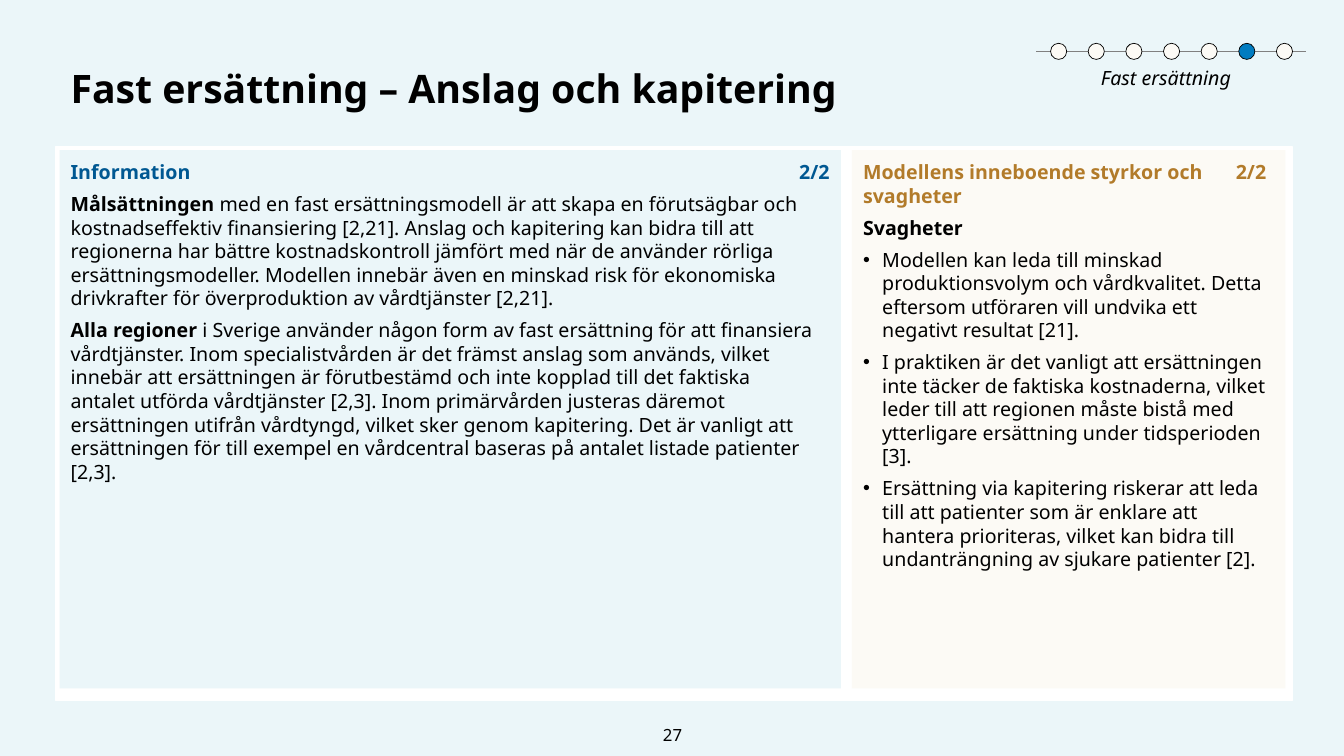
from lxml.etree import SubElement
from pptx import Presentation
from pptx.dml.color import RGBColor
from pptx.enum.shapes import MSO_CONNECTOR, MSO_SHAPE
from pptx.enum.text import MSO_ANCHOR as Anchor, MSO_AUTO_SIZE, PP_ALIGN as Align
from pptx.oxml.ns import qn
from pptx.util import Inches, Pt

BLACK = RGBColor(0x00, 0x00, 0x00)
WHITE = RGBColor(0xFF, 0xFF, 0xFF)
GRAY = RGBColor(0x80, 0x80, 0x80)
ICE = RGBColor(0xEB, 0xF6, 0xF9)
CREAM = RGBColor(0xFC, 0xFA, 0xF5)
BLUE = RGBColor(0x00, 0x58, 0x92)
OCHRE = RGBColor(0xB2, 0x7B, 0x2A)
ACTIVE = RGBColor(0x01, 0x7C, 0xC1)
FONT = "Noto Sans"
INDENT = 0.19

TITLE = "Fast ersättning – Anslag och kapitering"
SECTION = "Fast ersättning"
PAGE_NUMBER = "27"
PART = "2/2"
STEPS, CURRENT_STEP = 7, 5

# Each paragraph: (bold lead, regular text, has bullet)
INFORMATION = [
    ("Målsättningen ", "med en fast ersättningsmodell är att skapa en förutsägbar och "
     "kostnadseffektiv finansiering [2,21]. Anslag och kapitering kan bidra till att regionerna "
     "har bättre kostnadskontroll jämfört med när de använder rörliga ersättningsmodeller. "
     "Modellen innebär även en minskad risk för ekonomiska drivkrafter för överproduktion av "
     "vårdtjänster [2,21].", False),
    ("Alla regioner ", "i Sverige använder någon form av fast ersättning för att finansiera "
     "vårdtjänster. Inom specialistvården är det främst anslag som används, vilket innebär att "
     "ersättningen är förutbestämd och inte kopplad till det faktiska antalet utförda "
     "vårdtjänster [2,3]. Inom primärvården justeras däremot ersättningen utifrån vårdtyngd, "
     "vilket sker genom kapitering. Det är vanligt att ersättningen för till exempel en "
     "vårdcentral baseras på antalet listade patienter [2,3].", False),
]
WEAKNESSES = [
    ("Svagheter", "", False),
    ("", "Modellen kan leda till minskad produktionsvolym och vårdkvalitet. Detta eftersom "
     "utföraren vill undvika ett negativt resultat [21].", True),
    ("", "I praktiken är det vanligt att ersättningen inte täcker de faktiska kostnaderna, "
     "vilket leder till att regionen måste bistå med ytterligare ersättning under tidsperioden "
     "[3].", True),
    ("", "Ersättning via kapitering riskerar att leda till att patienter som är enklare att "
     "hantera prioriteras, vilket kan bidra till undanträngning av sjukare patienter [2].", True),
]
# Panel box, text box, left edge of the part label
PANELS = [
    ("Information", INFORMATION, BLUE, ICE,
     (0.59, 1.49, 7.75, 5.34), (0.7, 1.59, 7.53, 4.88), 7.26),
    ("Modellens inneboende styrkor och svagheter", WEAKNESSES, OCHRE, CREAM,
     (8.45, 1.49, 4.3, 5.34), (8.56, 1.59, 4.17, 5.2), 11.59),
]


def place(shape, box):
    shape.left, shape.top, shape.width, shape.height = map(Inches, box)


def add_filled(shapes, kind, box, fill, line=None, line_width=1):
    shape = shapes.add_shape(kind, *map(Inches, box))
    shape.shadow.inherit = False
    shape.fill.solid()
    shape.fill.fore_color.rgb = fill
    if line is None:
        shape.line.fill.background()
    else:
        shape.line.color.rgb = line
        shape.line.width = Pt(line_width)
    return shape


def set_frame(shape, insets, anchor=Anchor.TOP):
    frame = shape.text_frame
    frame.word_wrap = True
    frame.auto_size = MSO_AUTO_SIZE.NONE
    frame.vertical_anchor = anchor
    for side, inset in zip(("left", "top", "right", "bottom"), insets):
        setattr(frame, f"margin_{side}", Inches(inset))
    return frame


def add_run(paragraph, text, size=14, color=BLACK, bold=False, italic=False):
    run = paragraph.add_run()
    run.text = text
    formats = {"name": FONT, "size": Pt(size), "bold": bold, "italic": italic}
    for name, value in formats.items():
        setattr(run.font, name, value)
    run.font.color.rgb = color


def set_paragraph(paragraph, align=Align.LEFT, spacing=1.0, after=0):
    formats = {"alignment": align, "line_spacing": spacing,
               "space_before": Pt(0), "space_after": Pt(after)}
    for name, value in formats.items():
        setattr(paragraph, name, value)


def set_bullet(paragraph, bulleted):
    properties = paragraph._p.get_or_add_pPr()
    indent = Inches(INDENT) if bulleted else 0
    properties.set("marL", str(indent))
    properties.set("indent", str(-indent))
    if bulleted:
        SubElement(properties, qn("a:buFont"), typeface="Arial")
        SubElement(properties, qn("a:buChar"), char="•")
    else:
        SubElement(properties, qn("a:buNone"))


def add_label(slide, box, text, align, insets, anchor, **font):
    label = slide.shapes.add_textbox(*map(Inches, box))
    paragraph = set_frame(label, insets, anchor).paragraphs[0]
    set_paragraph(paragraph, align)
    add_run(paragraph, text, **font)


def fill_body(body, heading, paragraphs, color):
    frame = set_frame(body, (0, 0, 0.1, 0.05))
    first = frame.paragraphs[0]
    set_bullet(first, False)
    set_paragraph(first, after=6)
    add_run(first, heading, color=color, bold=True)
    for lead, text, bulleted in paragraphs:
        paragraph = frame.add_paragraph()
        set_bullet(paragraph, bulleted)
        set_paragraph(paragraph, after=6)
        if lead:
            add_run(paragraph, lead, bold=True)
        if text:
            add_run(paragraph, text)


def add_progress(slide):
    group = slide.shapes.add_group_shape()
    track = group.shapes.add_connector(
        MSO_CONNECTOR.STRAIGHT, *map(Inches, (12.95, 0.51, 10.28, 0.51)))
    track.line.color.rgb = GRAY
    track.line.width = Pt(1)
    SubElement(track._element.spPr, qn("a:effectLst"))
    first, last, size = 10.42, 12.66, 0.16
    step = (last - first) / (STEPS - 1)
    for index in range(STEPS):
        fill = ACTIVE if index == CURRENT_STEP else CREAM
        add_filled(group.shapes, MSO_SHAPE.OVAL,
                   (first + index * step, 0.43, size, size), fill, BLACK, 0.5)


def main():
    presentation = Presentation()
    presentation.slide_width, presentation.slide_height = Inches(13.33), Inches(7.5)
    slide = presentation.slides.add_slide(presentation.slide_layouts[3])
    slide.background.fill.solid()
    slide.background.fill.fore_color.rgb = ICE
    title, *bodies = slide.placeholders

    add_filled(slide.shapes, MSO_SHAPE.RECTANGLE, (0.55, 1.46, 12.27, 5.49), WHITE, WHITE)
    place(title, (0.7, 0.59, 11.94, 0.8))
    paragraph = set_frame(title, (0, 0, 0.1, 0.05)).paragraphs[0]
    set_paragraph(paragraph, spacing=1.1)
    add_run(paragraph, TITLE, size=28, bold=True)

    for body, panel in zip(bodies, PANELS):
        heading, paragraphs, color, fill, panel_box, text_box, part_left = panel
        add_filled(slide.shapes, MSO_SHAPE.RECTANGLE, panel_box, fill)
        place(body, text_box)
        fill_body(body, heading, paragraphs, color)
        body.element.getparent().append(body.element)  # bring in front of its panel
        add_label(slide, (part_left, 1.59, 0.97, 0.23), PART, Align.RIGHT,
                  (0, 0.05, 0, 0), Anchor.BOTTOM, color=color, bold=True)

    add_label(slide, (10.38, 0.61, 2.47, 0.16), SECTION, Align.CENTER,
              (0, 0.05, 0.1, 0.05), Anchor.TOP, italic=True)
    add_label(slide, (6.16, 7.09, 1.02, 0.4), PAGE_NUMBER, Align.CENTER,
              (0.1, 0.05, 0.1, 0.05), Anchor.MIDDLE, size=12)
    add_progress(slide)
    presentation.save("out.pptx")


if __name__ == "__main__":
    main()
